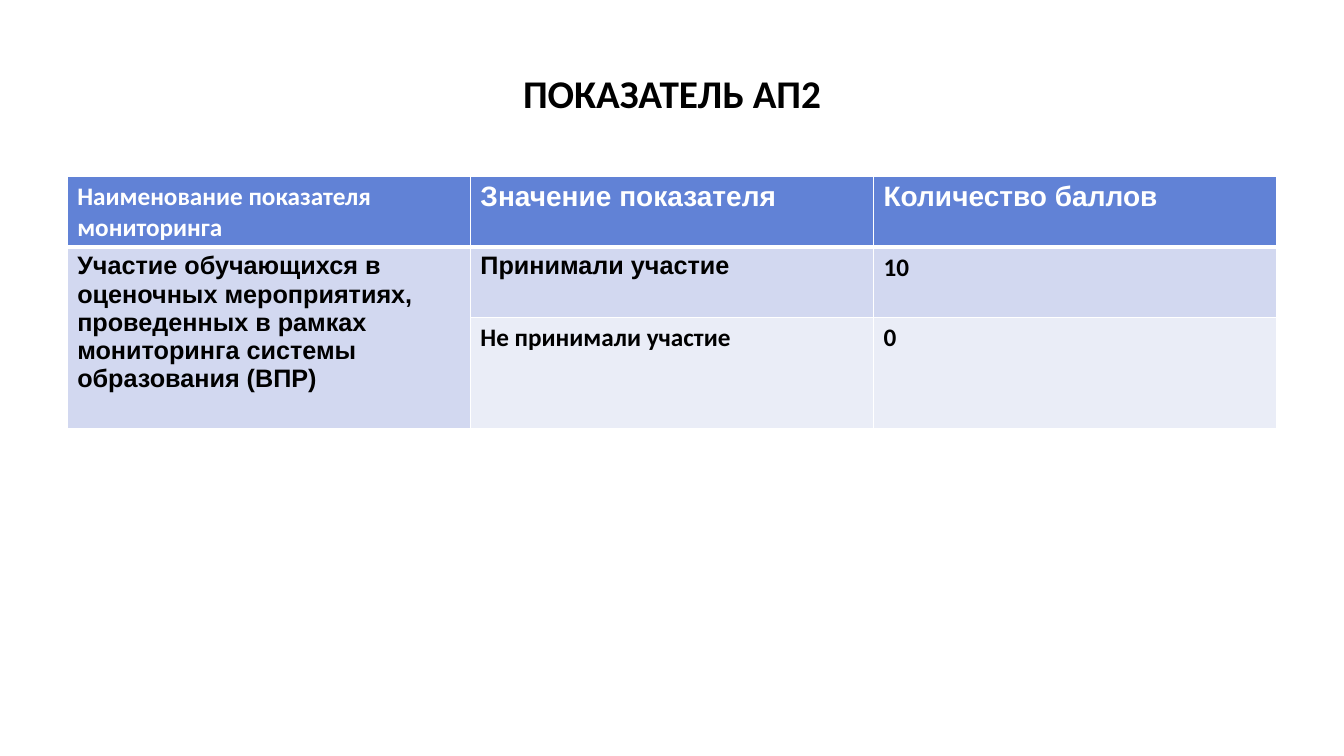
from lxml import etree
from pptx import Presentation
from pptx.dml.color import RGBColor
from pptx.enum.text import MSO_ANCHOR, PP_ALIGN
from pptx.oxml.ns import qn
from pptx.util import Inches, Pt

CENTER = PP_ALIGN.CENTER
MIDDLE = MSO_ANCHOR.MIDDLE
COLORS = {
    "white": "FFFFFF",
    "black": "000000",
    "header": "6182D6",
    "band": "D2D8F0",
    "light": "EAEDF7",
}
WIDTH, HEIGHT = 13.33, 7.5
MARGIN = WIDTH * 0.05
ROW_HEIGHTS = [0.7, 0.7, 1.1]
ROW_FILLS = ["header", "band", "light"]
ROWS = [
    [
        ("Наименование показателя мониторинга", "Calibri", 18),
        ("Значение показателя", "Arial", 20),
        ("Количество баллов", "Arial", 20),
    ],
    [
        ("Участие обучающихся в оценочных мероприятиях, проведенных в рамках "
         "мониторинга системы образования (ВПР)", "Arial", 18),
        ("Принимали участие", "Arial", 18),
        ("10", "Calibri", 18),
    ],
    [
        None,
        ("Не принимали участие", "Calibri", 18),
        ("0", "Calibri", 18),
    ],
]


def set_text(tf, text, font, size, color):
    p = tf.paragraphs[0]
    p.text = text
    p.font.name = font
    p.font.size = Pt(size)
    p.font.bold = True
    p.font.color.rgb = RGBColor.from_string(COLORS[color])
    return p


def set_borders(cell, bottom):
    tc_pr = cell._tc.get_or_add_tcPr()
    for side, width in (("L", 1), ("R", 1), ("T", 1), ("B", bottom)):
        ln = etree.SubElement(tc_pr, qn(f"a:ln{side}"), w=str(Pt(width)))
        fill = etree.SubElement(ln, qn("a:solidFill"))
        etree.SubElement(fill, qn("a:srgbClr"), val=COLORS["white"])


def add_title(slide, left, top, width, height):
    sp = slide.shapes.add_textbox(
        Inches(left), Inches(top), Inches(width), Inches(height))
    tf = sp.text_frame
    tf.word_wrap = True
    tf.vertical_anchor = MIDDLE
    p = set_text(tf, "ПОКАЗАТЕЛЬ АП2", "Calibri", 28, "black")
    p.alignment = CENTER


def add_score_table(slide, left, top, width):
    table = slide.shapes.add_table(
        len(ROWS), len(ROWS[0]), Inches(left), Inches(top),
        Inches(width), Inches(sum(ROW_HEIGHTS))).table
    for r, row in enumerate(ROWS):
        table.rows[r].height = Inches(ROW_HEIGHTS[r])
        for c, content in enumerate(row):
            cell = table.cell(r, c)
            set_borders(cell, 1 if r else 3)
            cell.fill.solid()
            cell.fill.fore_color.rgb = RGBColor.from_string(COLORS[ROW_FILLS[r]])
            if content:
                set_text(cell.text_frame, *content, "black" if r else "white")
    table.cell(1, 0).merge(table.cell(2, 0))


def main():
    prs = Presentation()
    prs.slide_width = Inches(WIDTH)
    prs.slide_height = Inches(HEIGHT)
    slide = prs.slides.add_slide(prs.slide_layouts[6])
    content_width = WIDTH - 2 * MARGIN
    add_title(slide, MARGIN, HEIGHT * 0.04, content_width, HEIGHT / 6)
    add_score_table(slide, MARGIN, 1.75, content_width)
    prs.save("out.pptx")


if __name__ == "__main__":
    main()
